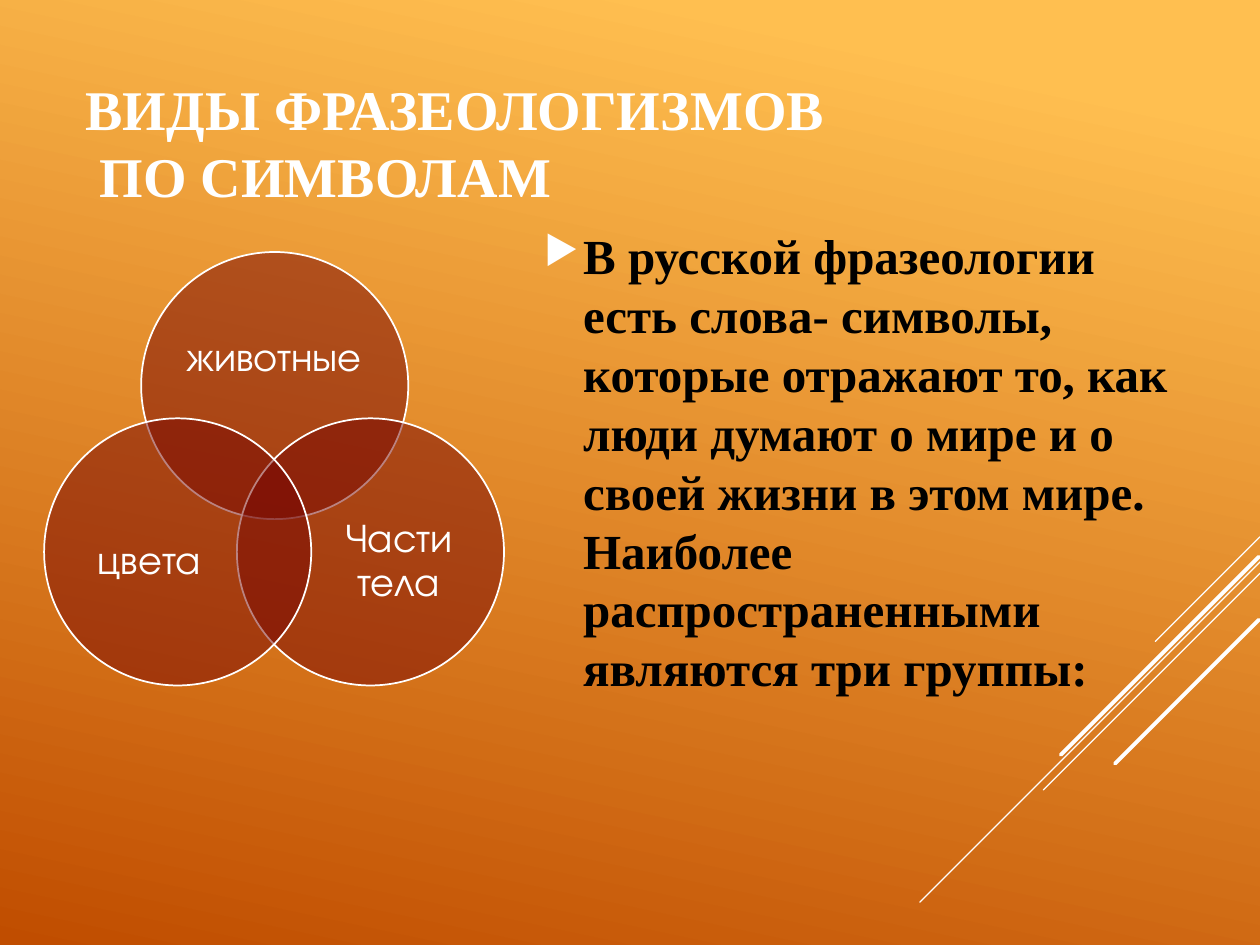
from dataclasses import dataclass

from lxml import etree
from pptx import Presentation
from pptx import util as u
from pptx.dml.color import RGBColor
from pptx.enum import shapes, text
from pptx.oxml.ns import qn


@dataclass(frozen=True)
class Theme:
    white: RGBColor = RGBColor.from_string("FFFFFF")
    black: RGBColor = RGBColor.from_string("000000")
    circle: RGBColor = RGBColor.from_string("760603")
    sky: RGBColor = RGBColor.from_string("FFBF50")
    ground: RGBColor = RGBColor.from_string("C04D00")
    serif: str = "Times New Roman"
    sans: str = "TeX Gyre Adventor"
    title_size: float = 32
    body_size: float = 28
    label_size: float = 23


@dataclass(frozen=True)
class Ray:
    """A 45-degree stroke running down and left from (x, y)."""
    x: float
    y: float
    run: float
    weight: float


@dataclass(frozen=True)
class Category:
    name: str
    circle_at: tuple[float, float]
    label_at: tuple[float, float, float, float]


THEME = Theme()
DIAMETER = 2.12
RAYS = [
    Ray(10, 4.26, 0.83, 0.75),
    Ray(10, 4.46, 2.7, 0.75),
    Ray(10, 4.55, 1.72, 0.75),
    Ray(9.99, 4.42, 1.57, 2.25),
    Ray(9.99, 4.92, 1.14, 2.25),
]
CATEGORIES = [
    Category("животные", (1.12, 2), (1.4, 2.37, 1.55, 0.95)),
    Category("Части тела", (1.88, 3.32), (2.53, 3.87, 1.27, 1.17)),
    Category("цвета", (0.35, 3.32), (0.55, 3.87, 1.27, 1.17)),
]
TITLE = "ВИДЫ ФРАЗЕОЛОГИЗМОВ\v ПО СИМВОЛАМ"
BODY = (
    "В русской фразеологии есть слова- символы, которые отражают то, "
    "как люди думают о мире и о своей жизни в этом мире. Наиболее "
    "распространенными являются три группы:"
)


def apply(target, values: dict) -> None:
    for name, value in values.items():
        setattr(target, name, value)


def format_font(font, name: str, size: float, color: RGBColor, bold: bool) -> None:
    apply(font, {"name": name, "size": u.Pt(size), "bold": bold})
    font.color.rgb = color


def place(shape, left: float, top: float, width: float, height: float) -> None:
    apply(shape, {
        "left": u.Inches(left), "top": u.Inches(top),
        "width": u.Inches(width), "height": u.Inches(height),
    })


def paint_background(page) -> None:
    fill = page.background.fill
    fill.gradient()
    fill.gradient_angle = 360 - 102
    for stop, position, color in zip(
        fill.gradient_stops, (0.1, 1), (THEME.sky, THEME.ground)
    ):
        stop.position = position
        stop.color.rgb = color


def draw_ray(page, ray: Ray) -> None:
    line = page.shapes.add_connector(
        shapes.MSO_CONNECTOR.STRAIGHT,
        u.Inches(ray.x), u.Inches(ray.y),
        u.Inches(ray.x - ray.run), u.Inches(ray.y + ray.run),
    )
    line.line.color.rgb = THEME.white
    line.line.width = u.Pt(ray.weight)
    properties = line._element.spPr
    properties.find(qn("a:ln")).set("cap", "rnd")
    etree.SubElement(properties, qn("a:effectLst"))


def write_title(page) -> None:
    title = page.shapes.title
    place(title, 0.58, 0.29, 8.92, 1.67)
    frame = title.text_frame
    apply(frame, {"text": TITLE, "word_wrap": True,
                  "vertical_anchor": text.MSO_ANCHOR.MIDDLE})
    para = frame.paragraphs[0]
    para.alignment = text.PP_ALIGN.LEFT
    format_font(para.font, THEME.serif, THEME.title_size, THEME.white, True)


def add_bullet(para, indent: float) -> None:
    """Give the paragraph a hanging white triangle."""
    properties = para._p.get_or_add_pPr()
    properties.set("marL", str(u.Inches(indent)))
    properties.set("indent", str(-u.Inches(indent)))
    color = etree.SubElement(properties, qn("a:buClr"))
    etree.SubElement(color, qn("a:srgbClr"), val=str(THEME.white))
    etree.SubElement(properties, qn("a:buSzPct"), val="80000")
    etree.SubElement(properties, qn("a:buChar"), char="▶")


def write_body(page) -> None:
    box = page.shapes.add_textbox(
        u.Inches(4.22), u.Inches(1.75), u.Inches(5.28), u.Inches(3.82)
    )
    frame = box.text_frame
    apply(frame, {"text": BODY, "word_wrap": True,
                  "vertical_anchor": text.MSO_ANCHOR.MIDDLE})
    para = frame.paragraphs[0]
    add_bullet(para, 0.31)
    format_font(para.font, THEME.serif, THEME.body_size, THEME.black, True)


def draw_category(page, category: Category) -> None:
    left, top = category.circle_at
    circle = page.shapes.add_shape(
        shapes.MSO_SHAPE.OVAL, u.Inches(left), u.Inches(top),
        u.Inches(DIAMETER), u.Inches(DIAMETER),
    )
    circle.shadow.inherit = False
    circle.fill.solid()
    circle.fill.fore_color.rgb = THEME.circle
    color = circle._element.spPr.find(qn("a:solidFill")).find(qn("a:srgbClr"))
    etree.SubElement(color, qn("a:alpha"), val="50000")
    circle.line.color.rgb = THEME.white
    circle.line.width = u.Pt(1)

    label = page.shapes.add_textbox(*map(u.Inches, category.label_at))
    frame = label.text_frame
    apply(frame, {
        "text": category.name, "word_wrap": True,
        "vertical_anchor": text.MSO_ANCHOR.MIDDLE,
        "margin_left": 0, "margin_right": 0, "margin_top": 0, "margin_bottom": 0,
    })
    para = frame.paragraphs[0]
    apply(para, {"alignment": text.PP_ALIGN.CENTER, "line_spacing": 0.9})
    format_font(para.font, THEME.sans, THEME.label_size, THEME.white, False)


def main() -> None:
    deck = Presentation()
    apply(deck, {"slide_width": u.Inches(10), "slide_height": u.Inches(7.5)})
    page = deck.slides.add_slide(deck.slide_layouts.get_by_name("Title Only"))
    paint_background(page)
    for ray in RAYS:
        draw_ray(page, ray)
    write_title(page)
    write_body(page)
    for category in CATEGORIES:
        draw_category(page, category)
    deck.save("out.pptx")


if __name__ == "__main__":
    main()
